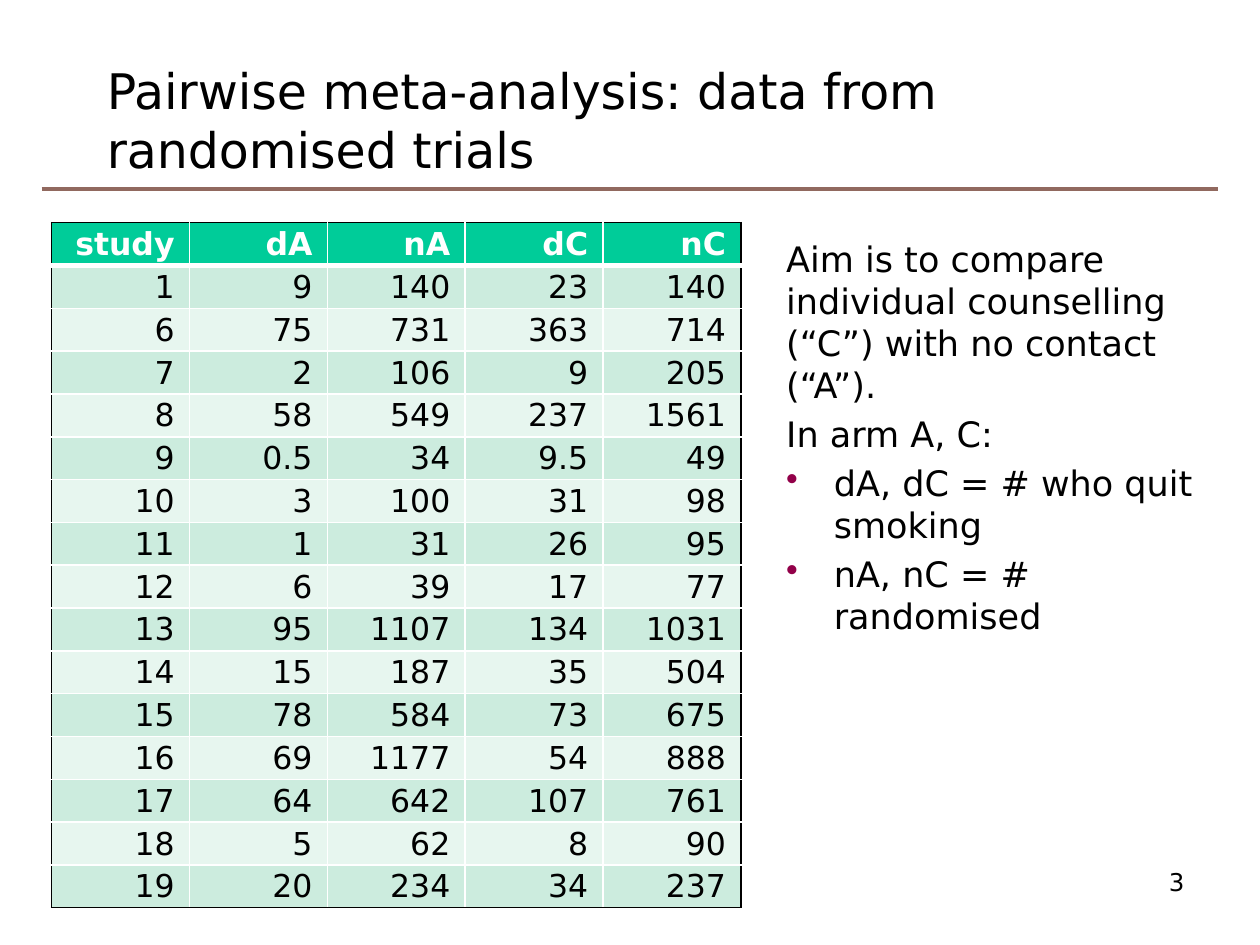
from lxml import etree
from pptx import Presentation
from pptx.dml.color import RGBColor
from pptx.enum import shapes, text
from pptx.oxml import ns
from pptx.util import Cm, Pt

FONT = "DejaVu Sans"
BLACK = RGBColor(0x00, 0x00, 0x00)
WHITE = RGBColor(0xFF, 0xFF, 0xFF)
RULE_BROWN = RGBColor(0x91, 0x69, 0x5F)
HEADER_GREEN = RGBColor(0x00, 0xCC, 0x99)
BAND_DARK = RGBColor(0xCC, 0xEC, 0xDE)
BAND_LIGHT = RGBColor(0xE7, 0xF6, 0xEF)
BULLET_PURPLE = RGBColor(0x92, 0x00, 0x49)

COLUMN_WIDTH, ROW_HEIGHT = Cm(2.78), Cm(0.84)
TRIALS = [
    ("study", "dA", "nA", "dC", "nC"),
    (1, 9, 140, 23, 140),
    (6, 75, 731, 363, 714),
    (7, 2, 106, 9, 205),
    (8, 58, 549, 237, 1561),
    (9, 0.5, 34, 9.5, 49),
    (10, 3, 100, 31, 98),
    (11, 1, 31, 26, 95),
    (12, 6, 39, 17, 77),
    (13, 95, 1107, 134, 1031),
    (14, 15, 187, 35, 504),
    (15, 78, 584, 73, 675),
    (16, 69, 1177, 54, 888),
    (17, 64, 642, 107, 761),
    (18, 5, 62, 8, 90),
    (19, 20, 234, 34, 237),
]
# Each paragraph with whether it is bulleted
NOTES = [
    ("Aim is to compare individual counselling (“C”) with no contact (“A”).", False),
    ("In arm A, C:", False),
    ("dA, dC = # who quit smoking", True),
    ("nA, nC = # randomised", True),
]


def add_element(parent, tag, **attributes):
    return etree.SubElement(parent, ns.qn(tag), **attributes)


def style_paragraph(para, size, color=BLACK, bold=False, align=text.PP_ALIGN.LEFT):
    para.alignment = align
    font = para.font
    font.name, font.size, font.bold = FONT, Pt(size), bold
    font.color.rgb = color


def add_title(page, wording):
    title = page.shapes.title
    title.left, title.top, title.width, title.height = Cm(1.9), Cm(1.27), Cm(21.74), Cm(2.26)
    title.text_frame.text = wording
    title.text_frame.auto_size = text.MSO_AUTO_SIZE.NONE
    title.text_frame.vertical_anchor = text.MSO_ANCHOR.MIDDLE
    style_paragraph(title.text_frame.paragraphs[0], 28)


def add_rule(page):
    rule = page.shapes.add_connector(
        shapes.MSO_CONNECTOR.STRAIGHT, Cm(0.84), Cm(3.81), Cm(24.56), Cm(3.81))
    rule.line.color.rgb = RULE_BROWN
    rule.line.width = Pt(1.75)
    add_element(rule._element.spPr, "a:effectLst")


def add_text_frame(page, left, top, width, height):
    frame = page.shapes.add_textbox(left, top, width, height).text_frame
    frame.word_wrap = True
    return frame


def set_borders(cell, row, column):
    """Black round the table, white inside, thicker under the header."""
    last_row, last_column = len(TRIALS) - 1, len(TRIALS[0]) - 1
    sides = {
        "a:lnL": (column == 0, 1),
        "a:lnR": (column == last_column, 1),
        "a:lnT": (row == 0, 3 if row == 1 else 1),
        "a:lnB": (row == last_row, 3 if row == 0 else 1),
    }
    properties = cell._tc.get_or_add_tcPr()
    for tag, (outer, width) in sides.items():
        line = add_element(properties, tag, w=str(Pt(width)))
        fill = add_element(line, "a:solidFill")
        add_element(fill, "a:srgbClr", val=str(BLACK if outer else WHITE))


def fill_cell(cell, value, row, column):
    cell.margin_left = cell.margin_right = Cm(0.3)
    cell.margin_top = cell.margin_bottom = Cm(0.05)
    cell.vertical_anchor = text.MSO_ANCHOR.BOTTOM
    cell.text = str(value)
    header = row == 0
    style_paragraph(cell.text_frame.paragraphs[0], 18, WHITE if header else BLACK,
                    header, text.PP_ALIGN.RIGHT)
    set_borders(cell, row, column)
    cell.fill.solid()
    band = BAND_DARK if row % 2 else BAND_LIGHT
    cell.fill.fore_color.rgb = HEADER_GREEN if header else band


def add_trial_table(page):
    rows, columns = len(TRIALS), len(TRIALS[0])
    table = page.shapes.add_table(rows, columns, Cm(1.04), Cm(4.49),
                                  COLUMN_WIDTH * columns, ROW_HEIGHT * rows).table
    for row, values in enumerate(TRIALS):
        table.rows[row].height = ROW_HEIGHT
        for column, value in enumerate(values):
            fill_cell(table.cell(row, column), value, row, column)


def add_bullet(para):
    properties = para._p.get_or_add_pPr()
    properties.set("marL", str(Cm(0.96)))
    properties.set("indent", str(-Cm(0.96)))
    color = add_element(properties, "a:buClr")
    add_element(color, "a:srgbClr", val=str(BULLET_PURPLE))
    add_element(properties, "a:buChar", char="•")


def add_notes_column(page):
    frame = add_text_frame(page, Cm(15.6), Cm(4.67), Cm(9.22), Cm(12.24))
    for index, (wording, bulleted) in enumerate(NOTES):
        para = frame.add_paragraph() if index else frame.paragraphs[0]
        para.text = wording
        if index:
            para.space_before = Pt(4)
        if bulleted:
            add_bullet(para)
        style_paragraph(para, 20)


def add_page_number(page, number):
    frame = add_text_frame(page, Cm(18.21), Cm(17.35), Cm(5.92), Cm(1.32))
    frame.text = number
    style_paragraph(frame.paragraphs[0], 14, align=text.PP_ALIGN.RIGHT)


def main():
    deck = Presentation()
    deck.slide_width, deck.slide_height = Cm(25.4), Cm(19.05)
    page = deck.slides.add_slide(deck.slide_layouts[5])
    add_rule(page)
    add_title(page, "Pairwise meta-analysis: data from randomised trials")
    add_page_number(page, "3")
    add_trial_table(page)
    add_notes_column(page)
    deck.save("out.pptx")


if __name__ == "__main__":
    main()
